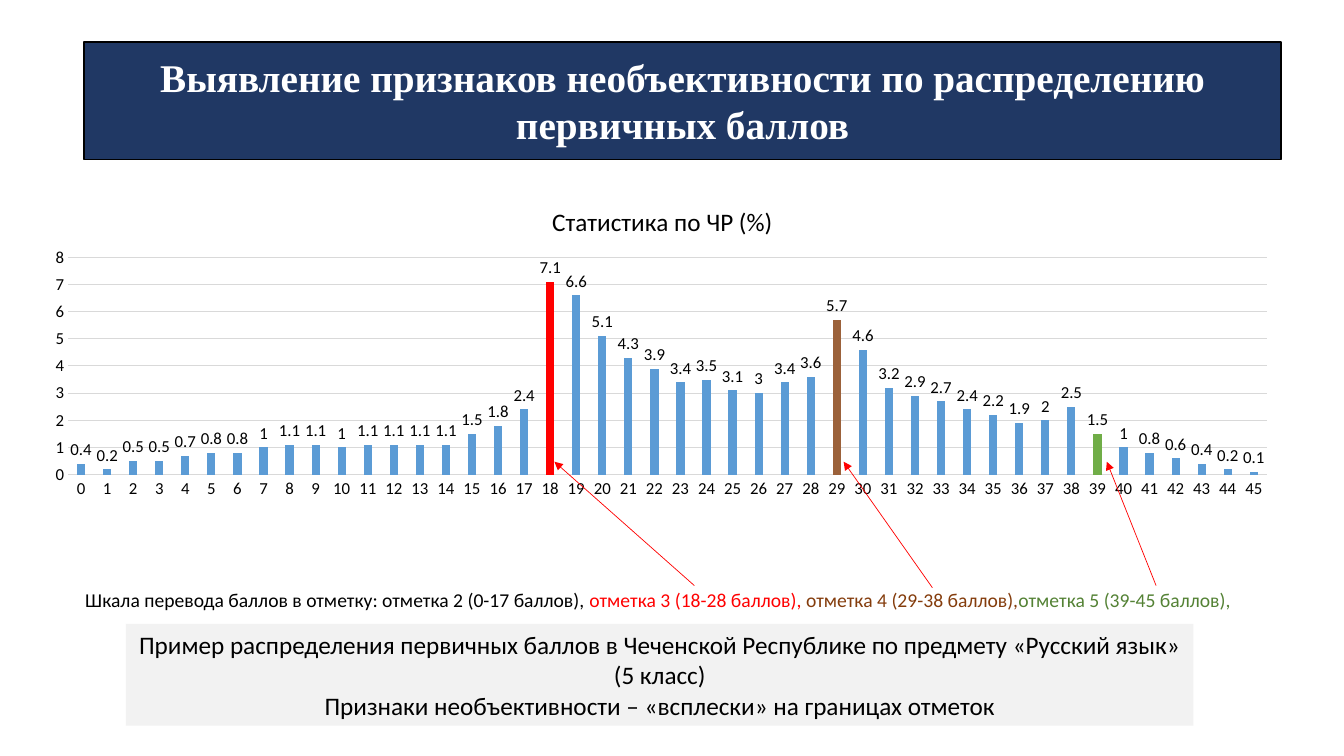
from dataclasses import dataclass
from lxml.etree import SubElement
from pptx import Presentation
from pptx.chart.data import CategoryChartData
from pptx.dml.color import RGBColor
from pptx.enum.chart import XL_CHART_TYPE, XL_LABEL_POSITION, XL_TICK_MARK
from pptx.enum.shapes import MSO_CONNECTOR, MSO_SHAPE
from pptx.enum.text import MSO_ANCHOR, PP_ALIGN
from pptx.oxml import parse_xml
from pptx.oxml.ns import nsdecls, qn
from pptx.util import Pt


@dataclass
class Theme:
    navy: RGBColor = RGBColor.from_string("203864")
    white: RGBColor = RGBColor.from_string("FFFFFF")
    black: RGBColor = RGBColor.from_string("000000")
    pale: RGBColor = RGBColor.from_string("F2F2F2")
    grid: RGBColor = RGBColor.from_string("D9D9D9")
    blue: RGBColor = RGBColor.from_string("5B9BD5")
    red: RGBColor = RGBColor.from_string("FF0000")
    brown: RGBColor = RGBColor.from_string("9B613A")
    rust: RGBColor = RGBColor.from_string("843C0C")
    green: RGBColor = RGBColor.from_string("70AD47")
    moss: RGBColor = RGBColor.from_string("548235")
    head: str = "Times New Roman"
    body: str = "Calibri"
    large: Pt = Pt(28)
    mid: Pt = Pt(18)
    note: Pt = Pt(14)
    small: Pt = Pt(12)


theme = Theme()


def style(font, size, color=theme.black, name=theme.body, bold=False):
    font.size = size
    font.name = name
    font.bold = bold
    font.color.rgb = color


def place(node, spot, **parts):
    for old in node.findall(qn("c:layout")):
        node.remove(old)
    tags = "".join(f'<c:{key} val="{val}"/>' for key, val in parts.items())
    node.insert(spot, parse_xml(
        f'<c:layout {nsdecls("c")}><c:manualLayout>{tags}</c:manualLayout></c:layout>'))


deck = Presentation()
deck.slide_width, deck.slide_height = Pt(960), Pt(540)
slide = deck.slides.add_slide(deck.slide_layouts[5])
shapes = slide.shapes

title = shapes.title
title.left, title.top, title.width, title.height = Pt(60), Pt(30), Pt(855), Pt(84)
title.fill.solid()
title.fill.fore_color.rgb = theme.navy
title.line.color.rgb = theme.black
title.line.width = Pt(1)
title.text_frame.text = "Выявление признаков необъективности по распределению первичных баллов"
title.text_frame.vertical_anchor = MSO_ANCHOR.MIDDLE
head = title.text_frame.paragraphs[0]
head.alignment = PP_ALIGN.CENTER
style(head.font, theme.large, theme.white, theme.head, True)

panel = shapes.add_shape(MSO_SHAPE.RECTANGLE, Pt(90), Pt(445.7), Pt(762.5), Pt(72.7))
panel.shadow.inherit = False
panel.fill.solid()
panel.fill.fore_color.rgb = theme.pale
panel.line.fill.background()
panel.text_frame.word_wrap = True
panel.text_frame.text = (
    "Пример распределения первичных баллов в Чеченской Республике по предмету «Русский язык» (5 класс)\n"
    "Признаки необъективности – «всплески» на границах отметок")
for para in panel.text_frame.paragraphs:
    para.alignment = PP_ALIGN.CENTER
    style(para.font, theme.mid)

rates = [
    0.4, 0.2, 0.5, 0.5, 0.7, 0.8, 0.8, 1, 1.1, 1.1, 1, 1.1, 1.1, 1.1, 1.1, 1.5,
    1.8, 2.4, 7.1, 6.6, 5.1, 4.3, 3.9, 3.4, 3.5, 3.1, 3, 3.4, 3.6, 5.7, 4.6,
    3.2, 2.9, 2.7, 2.4, 2.2, 1.9, 2, 2.5, 1.5, 1, 0.8, 0.6, 0.4, 0.2, 0.1,
]
data = CategoryChartData()
data.categories = [str(mark) for mark in range(len(rates))]
data.add_series("Статистика по ЧР (%)", rates)
chart = shapes.add_chart(XL_CHART_TYPE.COLUMN_CLUSTERED, Pt(21.6), Pt(128.9),
                         Pt(901.4), Pt(232.6), data).chart
style(chart.font, theme.small)
chart.has_legend = False
chart.has_title = True
label = chart.chart_title.text_frame
label.text = "Статистика по ЧР (%)"
style(label.paragraphs[0].font, theme.mid)
place(chart.chart_title._element, 1, xMode="edge", yMode="edge", x=0.41, y=0.06)
place(chart._chartSpace.chart.plotArea, 0, layoutTarget="inner", xMode="edge",
      yMode="edge", x=0.03, y=0.236, w=0.95, h=0.668)

for axis in (chart.category_axis, chart.value_axis):
    axis.major_tick_mark = axis.minor_tick_mark = XL_TICK_MARK.NONE
    style(axis.tick_labels.font, theme.small)
scale = chart.value_axis
scale.minimum_scale, scale.maximum_scale, scale.major_unit = 0, 8, 1
scale.format.line.fill.background()
for line in (chart.category_axis.format.line, scale.major_gridlines.format.line):
    line.color.rgb = theme.grid
    line.width = Pt(0.75)

plot = chart.plots[0]
plot.gap_width, plot.overlap = 219, -27
plot.vary_by_categories = False
plot.has_data_labels = True
plot.data_labels.show_value = True
plot.data_labels.position = XL_LABEL_POSITION.OUTSIDE_END
style(plot.data_labels.font, theme.small)
bars = plot.series[0]
bars.format.fill.solid()
bars.format.fill.fore_color.rgb = theme.blue
for mark, color in ((18, theme.red), (29, theme.brown), (39, theme.green)):
    fill = bars.points[mark].format.fill
    fill.solid()
    fill.fore_color.rgb = color

key = shapes.add_textbox(Pt(0), Pt(416.2), Pt(943.2), Pt(24.5)).text_frame
key.word_wrap = True
para = key.paragraphs[0]
para.alignment = PP_ALIGN.CENTER
for text, color in (
    ("Шкала перевода баллов в отметку: отметка 2 (0-17 баллов),", theme.black),
    (" отметка 3 (18-28 баллов), ", theme.red),
    ("отметка 4 (29-38 баллов),", theme.rust),
    ("отметка 5 (39-45 баллов), ", theme.moss),
):
    run = para.add_run()
    run.text = text
    style(run.font, theme.note, color)

for left, top, tip in ((496, 418.3, 396), (666, 419.8, 602.6), (825.8, 418.3, 790.6)):
    arrow = shapes.add_connector(MSO_CONNECTOR.STRAIGHT, Pt(left), Pt(top), Pt(tip), Pt(329.8))
    arrow.line.color.rgb = theme.red
    arrow.line.width = Pt(0.5)
    SubElement(arrow.line._get_or_add_ln(), qn("a:tailEnd"), type="triangle")
    SubElement(arrow._element.spPr, qn("a:effectLst"))

deck.save("out.pptx")
